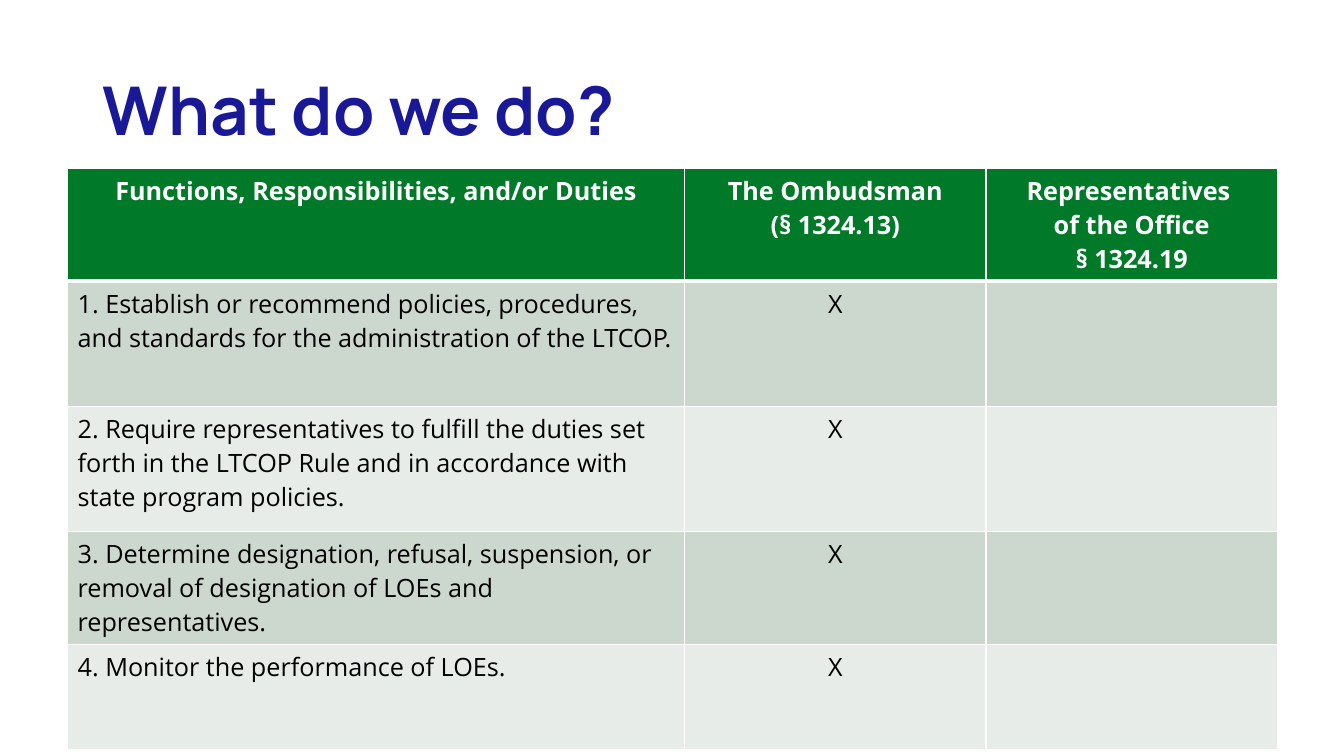
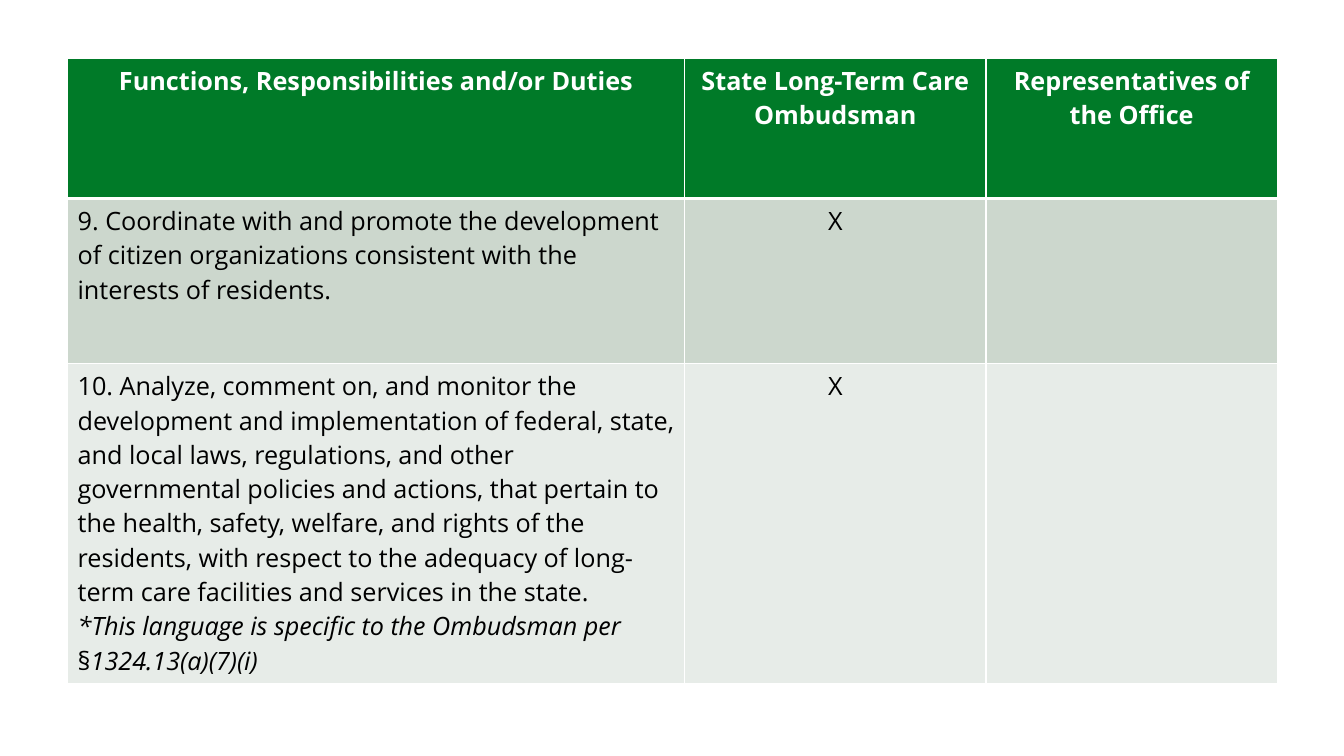
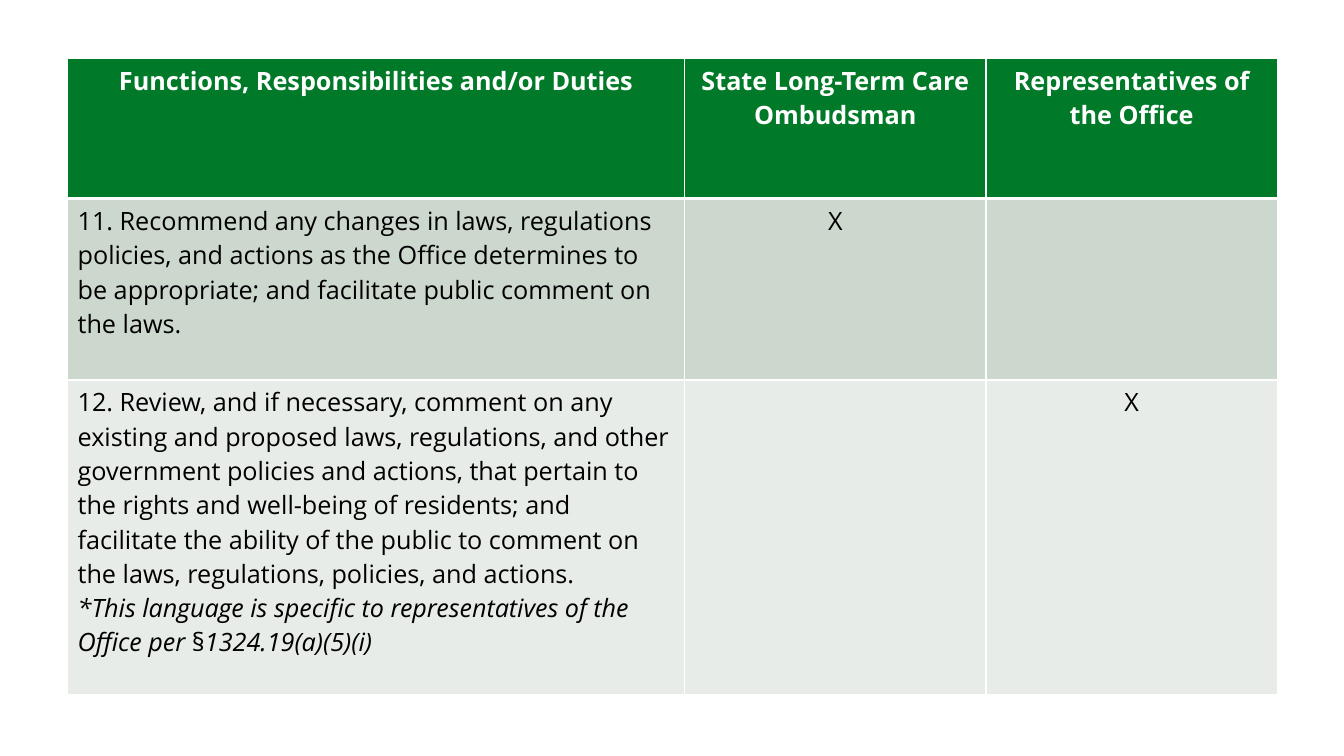
from lxml.etree import SubElement
from pptx import Presentation
from pptx.dml.color import RGBColor
from pptx.enum.text import MSO_ANCHOR, PP_ALIGN
from pptx.oxml.ns import qn
from pptx.util import Pt

PX = 9144  # 100 px to the inch
COLORS = {
    "title": "191998",
    "header": "007A28",
    "odd_row": "CCD7CD",
    "even_row": "E7ECE8",
    "border": "FFFFFF",
    "header_text": "FFFFFF",
    "body_text": "000000",
}
TITLE_FONT, TABLE_FONT = "Manrope", "Open Sans"
TABLE_LEFT = 67
COLUMN_WIDTHS = [612, 299, 289]
TITLE_ONLY_LAYOUT, BLANK_LAYOUT = 5, 6
DUTIES_HEADER = [
    "Functions, Responsibilities and/or Duties",
    "State Long-Term Care Ombudsman",
    "Representatives of the Office",
]

# A paragraph that starts with * is an italic note with an upright § sign.
SLIDES = [
    {
        "title": "What do we do?",
        "top": 167,
        "heights": [110, 124, 124, 112, 105],
        "rows": [
            ["Functions, Responsibilities, and/or Duties",
             "The Ombudsman\v(§ 1324.13)",
             "Representatives \vof the Office\v§ 1324.19"],
            ["1. Establish or recommend policies, procedures, and standards "
             "for the administration of the LTCOP.", "X", ""],
            ["2. Require representatives to fulfill the duties set forth in "
             "the LTCOP Rule and in accordance with state program policies.", "X", ""],
            ["3. Determine designation, refusal, suspension, or removal of "
             "designation of LOEs and representatives.", "X", ""],
            ["4. Monitor the performance of LOEs.", "X", ""],
        ],
    },
    {
        "top": 58,
        "heights": [139, 164, 317],
        "rows": [
            DUTIES_HEADER,
            ["9. Coordinate with and promote the development of citizen "
             "organizations consistent with the interests of residents.", "X", ""],
            ["10. Analyze, comment on, and monitor the development and "
             "implementation of federal, state, and local laws, regulations, and "
             "other governmental policies and actions, that pertain to the health, "
             "safety, welfare, and rights of the residents, with respect to the "
             "adequacy of long-term care facilities and services in the state.\n"
             "*This language is specific to the Ombudsman per §1324.13(a)(7)(i)", "X", ""],
        ],
    },
    {
        "top": 58,
        "heights": [139, 180, 312],
        "rows": [
            DUTIES_HEADER,
            ["11. Recommend any changes in laws, regulations policies, and actions "
             "as the Office determines to be appropriate; and facilitate public "
             "comment on the laws.", "X", ""],
            ["12. Review, and if necessary, comment on any existing and proposed "
             "laws, regulations, and other government policies and actions, that "
             "pertain to the rights and well-being of residents; and facilitate the "
             "ability of the public to comment on the laws, regulations, policies, "
             "and actions.\n"
             "*This language is specific to representatives of the Office per "
             "§1324.19(a)(5)(i)", "", "X"],
        ],
    },
]


def set_borders(cell, row_index):
    """Draw thin cell borders, with a thick line under the header row."""
    thick_edge = {0: "lnB", 1: "lnT"}.get(row_index)
    properties = cell._tc.get_or_add_tcPr()
    for edge in ("lnL", "lnR", "lnT", "lnB"):
        width = Pt(3 if edge == thick_edge else 1)
        line = SubElement(properties, qn(f"a:{edge}"), w=str(width))
        fill = SubElement(line, qn("a:solidFill"))
        SubElement(fill, qn("a:srgbClr"), val=COLORS["border"])


def format_cell(cell, row_index, column_index):
    is_header = row_index == 0
    fill_name = "header" if is_header else "odd_row" if row_index % 2 else "even_row"
    set_borders(cell, row_index)
    cell.fill.solid()
    cell.fill.fore_color.rgb = RGBColor.from_string(COLORS[fill_name])
    for paragraph in cell.text_frame.paragraphs:
        centered = is_header or column_index > 0
        paragraph.alignment = PP_ALIGN.CENTER if centered else PP_ALIGN.LEFT
        is_note = paragraph.text.startswith("*")
        if is_note:
            parts = paragraph.text.partition("§")
            paragraph.text = parts[0]
            for part in parts[1:]:
                paragraph.add_run().text = part
        for run in paragraph.runs:
            font = run.font
            font.name, font.size, font.bold = TABLE_FONT, Pt(18), is_header
            font.italic = is_note and run.text != "§"
            text_color = COLORS["header_text" if is_header else "body_text"]
            font.color.rgb = RGBColor.from_string(text_color)


presentation = Presentation()
presentation.slide_width = 1333 * PX
presentation.slide_height = 750 * PX

for content in SLIDES:
    layout = TITLE_ONLY_LAYOUT if "title" in content else BLANK_LAYOUT
    slide = presentation.slides.add_slide(presentation.slide_layouts[layout])

    if "title" in content:
        title = slide.shapes.title
        title.left, title.top = 92 * PX, 40 * PX
        title.width, title.height = 1150 * PX, 145 * PX
        title.text_frame.text = content["title"]
        title.text_frame.vertical_anchor = MSO_ANCHOR.MIDDLE
        paragraph = title.text_frame.paragraphs[0]
        paragraph.alignment = PP_ALIGN.LEFT
        paragraph.line_spacing = 0.9
        font = paragraph.runs[0].font
        font.name, font.size, font.bold = TITLE_FONT, Pt(48), True
        font.color.rgb = RGBColor.from_string(COLORS["title"])

    rows, heights = content["rows"], content["heights"]
    table = slide.shapes.add_table(
        len(rows), len(COLUMN_WIDTHS), TABLE_LEFT * PX, content["top"] * PX,
        sum(COLUMN_WIDTHS) * PX, sum(heights) * PX).table
    for column, width in zip(table.columns, COLUMN_WIDTHS):
        column.width = width * PX
    for row_index, (texts, height) in enumerate(zip(rows, heights)):
        table.rows[row_index].height = height * PX
        for column_index, text in enumerate(texts):
            cell = table.cell(row_index, column_index)
            cell.text_frame.text = text
            format_cell(cell, row_index, column_index)

presentation.save("out.pptx")
